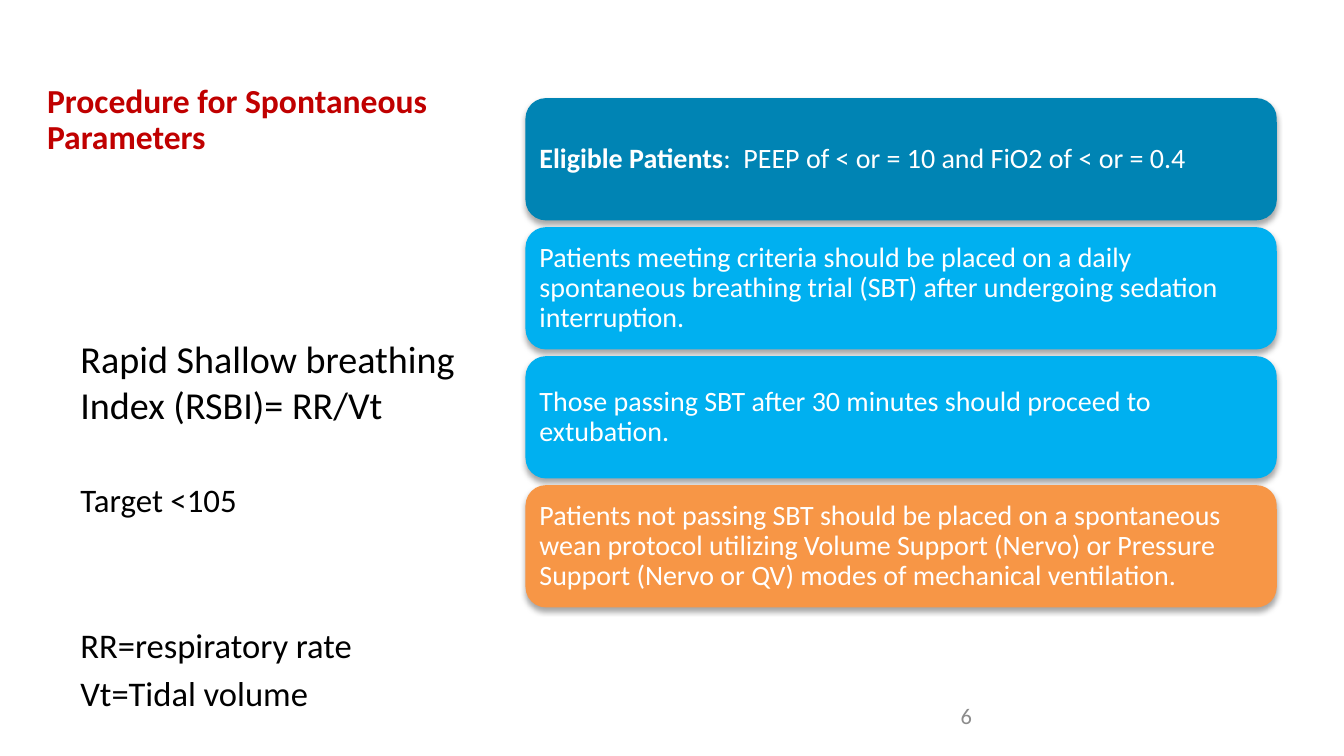
from lxml.etree import SubElement
from pptx import Presentation
from pptx.dml.color import RGBColor
from pptx.enum.shapes import MSO_SHAPE
from pptx.enum.text import MSO_ANCHOR, PP_ALIGN
from pptx.oxml.ns import qn
from pptx.util import Inches, Pt

FONT = "Calibri"
COLORS = {
    "title": "C00000",
    "body": "000000",
    "number": "8C8C8C",
    "card text": "FFFFFF",
    "eligible": "0084B4",
    "trial": "00B0F0",
    "wean": "F79646",
    "shadow": "000000",
}
TITLE = "Procedure for Spontaneous Parameters"
NOTES = [
    ("Rapid Shallow breathing Index (RSBI)= RR/Vt", 20.4, 0),
    ("Target <105", 17.6, 28),
    ("RR=respiratory rate", 18.5, 56),
    ("Vt=Tidal volume", 18.5, 3.7),
]
CARDS = [
    ("eligible", [("Eligible Patients", True),
                  (":  PEEP of < or = 10 and FiO2 of < or = 0.4", False)]),
    ("trial", [("Patients meeting criteria should be placed on a daily spontaneous "
                "breathing trial (SBT) after undergoing sedation interruption.", False)]),
    ("trial", [("Those passing SBT after 30 minutes should proceed to extubation.", False)]),
    ("wean", [("Patients not passing SBT should be placed on a spontaneous wean protocol "
               "utilizing Volume Support (Nervo) or Pressure Support (Nervo or QV) modes "
               "of mechanical ventilation.", False)]),
]
CARD_LEFT, CARD_TOP, CARD_WIDTH, CARD_HEIGHT, CARD_PITCH = 3.91, 0.73, 5.59, 0.91, 0.96


def color(name):
    return RGBColor.from_string(COLORS[name])


def add_run(paragraph, text, size, color_name, bold=False):
    run = paragraph.add_run()
    run.text = text
    run.font.name = FONT
    run.font.size = Pt(size)
    run.font.bold = bold
    run.font.color.rgb = color(color_name)


def add_text_box(slide, left, top, width, height):
    frame = slide.shapes.add_textbox(
        Inches(left), Inches(top), Inches(width), Inches(height)).text_frame
    frame.word_wrap = True
    return frame


def add_shadow(shape):
    shape.shadow.inherit = False
    effects = shape._element.spPr.find(qn("a:effectLst"))
    shadow = SubElement(effects, qn("a:outerShdw"), blurRad=str(Pt(3.1)),
                        dist=str(Pt(1.8)), dir="5400000", rotWithShape="0")
    shade = SubElement(shadow, qn("a:srgbClr"), val=COLORS["shadow"])
    SubElement(shade, qn("a:alpha"), val="35000")


def add_title(slide):
    title = slide.shapes.title
    title.left, title.top = Inches(0.25), Inches(0.48)
    title.width, title.height = Inches(4.17), Inches(0.74)
    title.text_frame.vertical_anchor = MSO_ANCHOR.BOTTOM
    paragraph = title.text_frame.paragraphs[0]
    paragraph.alignment = PP_ALIGN.LEFT
    paragraph.line_spacing = 0.9
    add_run(paragraph, TITLE, 18, "title", True)


def add_notes(slide):
    frame = add_text_box(slide, 0.5, 2.45, 3.29, 2.95)
    for index, (text, size, space) in enumerate(NOTES):
        paragraph = frame.add_paragraph() if index else frame.paragraphs[0]
        if space:
            paragraph.space_before = Pt(space)
        add_run(paragraph, text, size, "body")


def add_card(slide, index, fill, runs):
    card = slide.shapes.add_shape(
        MSO_SHAPE.ROUNDED_RECTANGLE, Inches(CARD_LEFT),
        Inches(CARD_TOP + index * CARD_PITCH), Inches(CARD_WIDTH), Inches(CARD_HEIGHT))
    card.fill.solid()
    card.fill.fore_color.rgb = color(fill)
    card.line.fill.background()
    add_shadow(card)
    frame = card.text_frame
    frame.word_wrap = True
    frame.vertical_anchor = MSO_ANCHOR.MIDDLE
    frame.margin_left = frame.margin_right = Inches(0.06)
    paragraph = frame.paragraphs[0]
    paragraph.alignment = PP_ALIGN.LEFT
    paragraph.line_spacing = 0.9
    for text, bold in runs:
        add_run(paragraph, text, 15, "card text", bold)


def add_slide_number(slide):
    frame = add_text_box(slide, 6.58, 5.19, 0.75, 0.3)
    frame.vertical_anchor = MSO_ANCHOR.MIDDLE
    paragraph = frame.paragraphs[0]
    paragraph.alignment = PP_ALIGN.RIGHT
    paragraph.line_spacing = 0.9
    add_run(paragraph, "6", 12, "number")


def main():
    presentation = Presentation()
    presentation.slide_width = Inches(10)
    presentation.slide_height = presentation.slide_width * 9 // 16
    slide = presentation.slides.add_slide(presentation.slide_layouts[5])
    add_title(slide)
    add_notes(slide)
    add_slide_number(slide)
    for index, (fill, runs) in enumerate(CARDS):
        add_card(slide, index, fill, runs)
    presentation.save("out.pptx")


if __name__ == "__main__":
    main()
